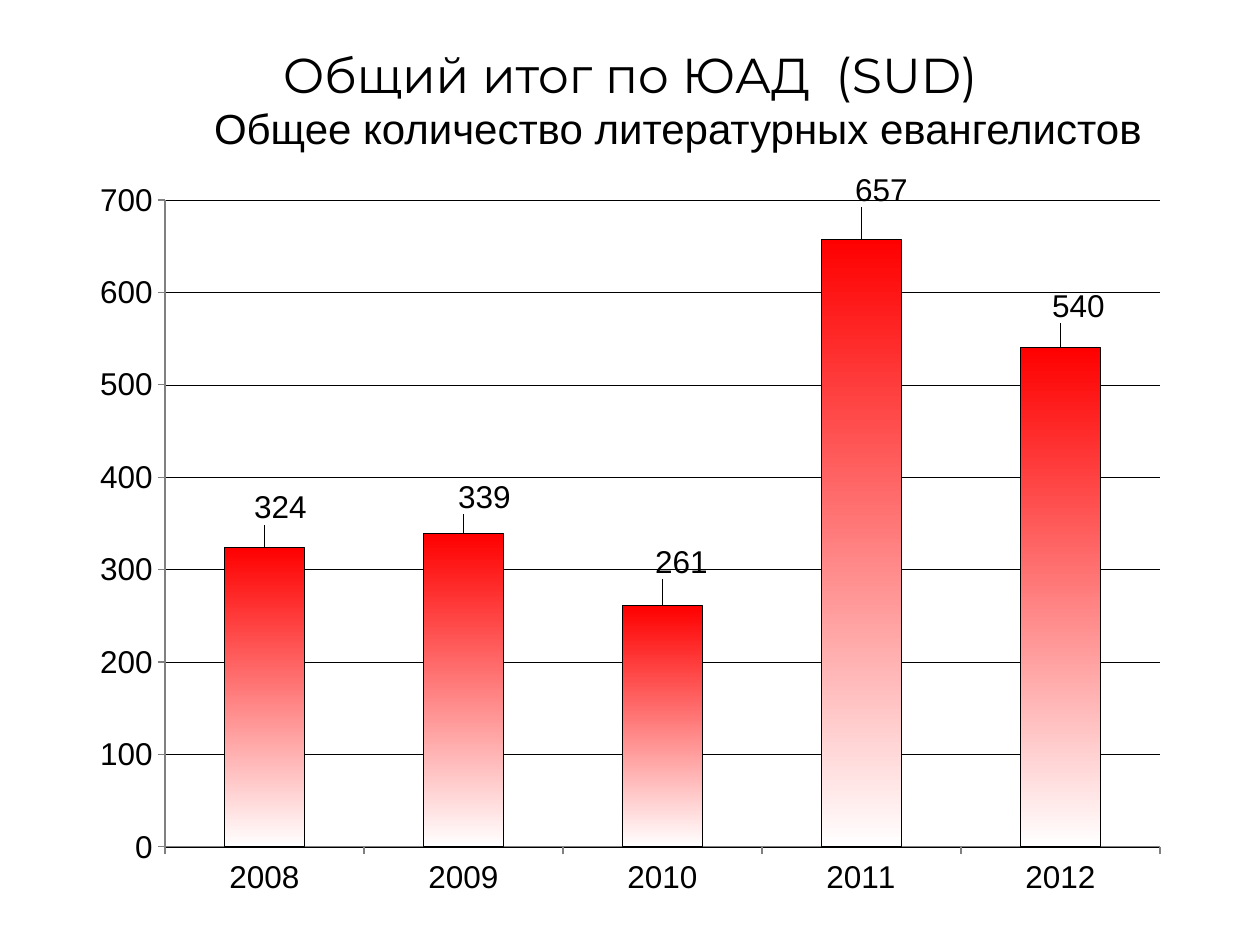
from lxml import etree
from pptx import Presentation
from pptx.chart.data import CategoryChartData
from pptx.dml.color import RGBColor
from pptx.enum.chart import XL_CHART_TYPE, XL_LABEL_POSITION, XL_TICK_MARK
from pptx.enum.text import MSO_ANCHOR, PP_ALIGN
from pptx.oxml.ns import qn
from pptx.util import Emu, Pt

COLUMNS = XL_CHART_TYPE.COLUMN_CLUSTERED
OUTSIDE_END = XL_LABEL_POSITION.OUTSIDE_END
TICK_OUTSIDE = XL_TICK_MARK.OUTSIDE
TOP, CENTER = MSO_ANCHOR.TOP, PP_ALIGN.CENTER
TITLE_ONLY = 5

PX = 914400 // 126
BLACK, GREY = "000000", "808080"
BAR_GRADIENT = ("FF0000", "FFFFFF")

TITLE = "Общий итог по ЮАД  (SUD)"
SUBTITLE = "Общее количество литературных евангелистов"
EVANGELISTS = {"2008": 324, "2009": 339, "2010": 261, "2011": 657, "2012": 540}
LABEL_SHIFTS = [(16, -17), (21, -14), (19, -21), (20, -27), (18, -19)]

TITLE_BOX = (63, 38, 1134, 157)
SUBTITLE_BOX = (179, 96, 998, 63)
CHART_BOX = (78, 168, 1104, 741)
PLOT_BOX = (165, 200, 995, 647)


def color(value):
    return RGBColor.from_string(value)


def lengths(box):
    return [Emu(value * PX) for value in box]


def format_font(font, name, size):
    for key, value in {"name": name, "size": Pt(size), "bold": False}.items():
        setattr(font, key, value)
    font.color.rgb = color(BLACK)


def format_line(line, value, width):
    line.color.rgb = color(value)
    line.width = Pt(width)


def write(shape, text, name, size):
    frame = shape.text_frame
    for key, value in {"word_wrap": True, "vertical_anchor": TOP}.items():
        setattr(frame, key, value)
    para = frame.paragraphs[0]
    para.alignment = CENTER
    span = para.add_run()
    span.text = text
    format_font(span.font, name, size)


def manual_layout(values):
    layout = etree.Element(qn("c:layout"))
    manual = etree.SubElement(layout, qn("c:manualLayout"))
    for key, value in values.items():
        etree.SubElement(manual, qn("c:" + key)).set("val", str(value))
    return layout


def place_plot(chart):
    left, top, width, height = CHART_BOX
    plot_left, plot_top, plot_width, plot_height = PLOT_BOX
    area = chart._chartSpace.chart.plotArea
    for old in area.findall(qn("c:layout")):
        area.remove(old)
    area.insert(0, manual_layout({
        "layoutTarget": "inner", "xMode": "edge", "yMode": "edge",
        "x": round((plot_left - left) / width, 4),
        "y": round((plot_top - top) / height, 4),
        "w": round(plot_width / width, 4),
        "h": round(plot_height / height, 4),
    }))


def format_axes(chart):
    for axis in (chart.category_axis, chart.value_axis):
        axis.major_tick_mark = TICK_OUTSIDE
        format_line(axis.format.line, GREY, 0.75)
    values = chart.value_axis
    values.minimum_scale, values.maximum_scale, values.major_unit = 0, 700, 100
    values.tick_labels.number_format = "#,##0"
    values.tick_labels.number_format_is_linked = False
    format_line(values.major_gridlines.format.line, BLACK, 0.25)


def format_bars(plot):
    plot.gap_width = 150
    plot.vary_by_categories = False
    bars = plot.series[0]
    bars.invert_if_negative = False
    fill = bars.format.fill
    fill.gradient()
    fill.gradient_angle = 270
    for stop, value, position in zip(fill.gradient_stops, BAR_GRADIENT, (0, 1)):
        stop.color.rgb = color(value)
        stop.position = position
    format_line(bars.format.line, BLACK, 0.75)
    labels = bars.data_labels
    labels.show_value = True
    labels.number_format = "#,##0"
    labels.number_format_is_linked = False
    labels.position = OUTSIDE_END
    format_font(labels.font, "Arial", 18)
    for index, (right, down) in enumerate(LABEL_SHIFTS):
        label = bars.points[index].data_label
        label.position = OUTSIDE_END
        format_font(label.font, "Arial", 18)
        element = labels._element.findall(qn("c:dLbl"))[index]
        element.insert(1, manual_layout({
            "x": round(right / CHART_BOX[2], 4),
            "y": round(down / CHART_BOX[3], 4),
        }))


def main():
    deck = Presentation()
    deck.slide_width, deck.slide_height = lengths((1260, 945))
    page = deck.slides.add_slide(deck.slide_layouts[TITLE_ONLY])

    data = CategoryChartData(number_format="#,##0")
    data.categories = list(EVANGELISTS)
    data.add_series("Series 1", list(EVANGELISTS.values()))
    chart = page.shapes.add_chart(COLUMNS, *lengths(CHART_BOX), data).chart
    chart.has_legend = False
    chart.has_title = False
    format_font(chart.font, "Arial", 18)
    place_plot(chart)
    format_axes(chart)
    format_bars(chart.plots[0])

    title = page.shapes.title
    title.left, title.top, title.width, title.height = lengths(TITLE_BOX)
    write(title, TITLE, "Montserrat", 28)
    subtitle = page.shapes.add_textbox(*lengths(SUBTITLE_BOX))
    write(subtitle, SUBTITLE, "Arial", 24)

    deck.save("out.pptx")


if __name__ == "__main__":
    main()
